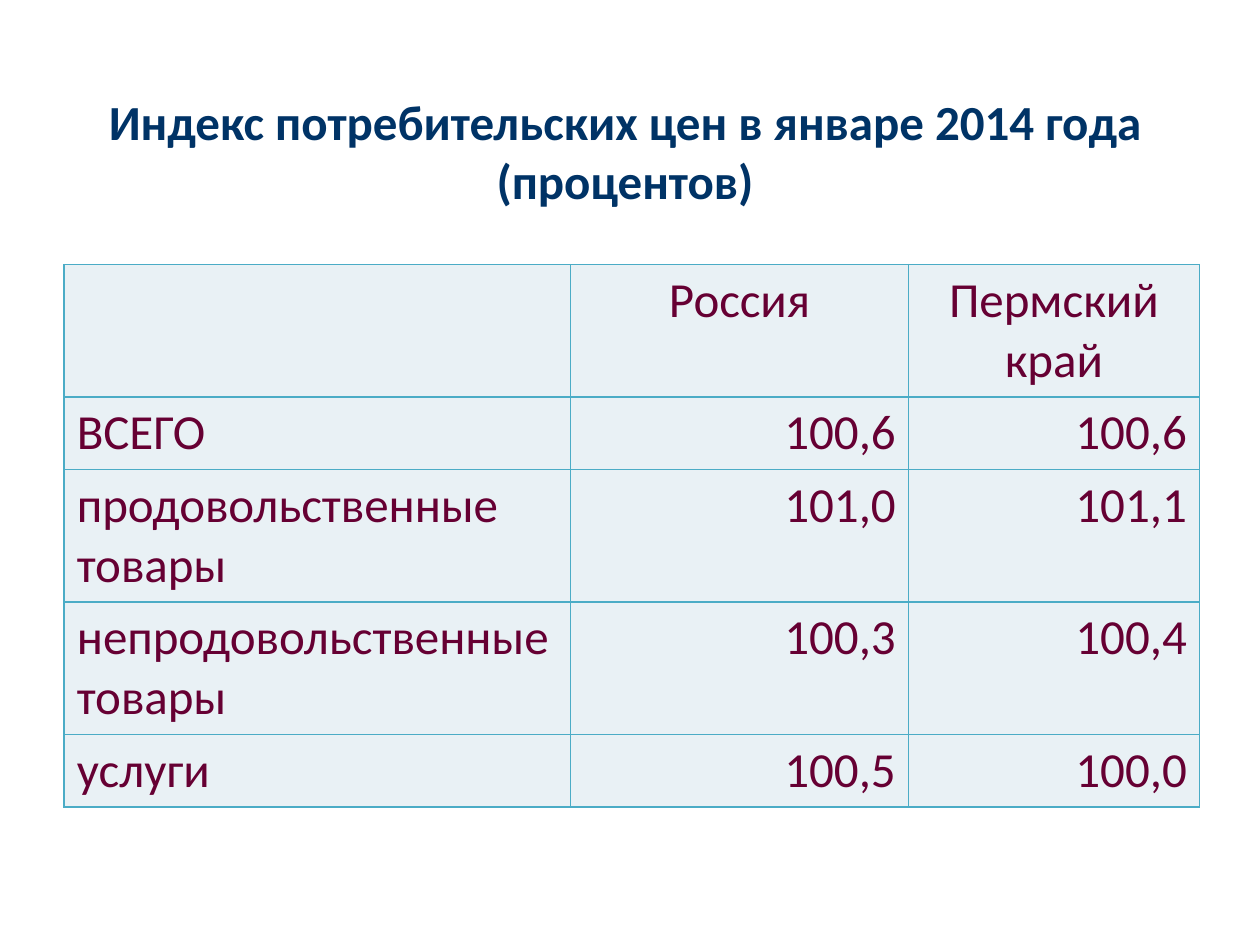
import dataclasses
import typing

import lxml.etree
import pptx
import pptx.dml.color
import pptx.enum.text
import pptx.oxml.ns
import pptx.util

Inches = pptx.util.Inches
Align = pptx.enum.text.PP_ALIGN


@dataclasses.dataclass(frozen=True)
class Theme:
    font: str = "Calibri"
    size: int = 28
    title: str = "003366"
    text: str = "660033"
    fill: str = "E9F1F5"
    border: str = "4BACC6"
    border_width: int = 1


class IndexRow(typing.NamedTuple):
    label: str
    russia: str
    region: str
    height: float


THEME = Theme()
ONE_LINE, TWO_LINES = 0.57, 1.03
TITLE_LINES = ("Индекс потребительских цен в январе 2014 года", "(процентов)")
COLUMN_WIDTHS = (4.02, 2.68, 2.31)
INDEX_ROWS = (
    IndexRow("", "Россия", "Пермский край", TWO_LINES),
    IndexRow("ВСЕГО", "100,6", "100,6", ONE_LINE),
    IndexRow("продовольственные товары", "101,0", "101,1", TWO_LINES),
    IndexRow("непродовольственные товары", "100,3", "100,4", TWO_LINES),
    IndexRow("услуги", "100,5", "100,0", ONE_LINE),
)


def style_paragraph(paragraph, color: str, alignment: Align, bold: bool) -> None:
    paragraph.alignment = alignment
    paragraph.font.name = THEME.font
    paragraph.font.size = pptx.util.Pt(THEME.size)
    paragraph.font.bold = bold
    paragraph.font.color.rgb = pptx.dml.color.RGBColor.from_string(color)


def add_borders(cell) -> None:
    properties = cell._tc.get_or_add_tcPr()
    qn = pptx.oxml.ns.qn
    for position, side in enumerate(("lnL", "lnR", "lnT", "lnB")):
        line = lxml.etree.Element(qn(f"a:{side}"), w=str(pptx.util.Pt(THEME.border_width)))
        fill = lxml.etree.SubElement(line, qn("a:solidFill"))
        lxml.etree.SubElement(fill, qn("a:srgbClr"), val=THEME.border)
        properties.insert(position, line)


def fill_cell(cell, text: str, alignment: Align) -> None:
    cell.text = text
    style_paragraph(cell.text_frame.paragraphs[0], THEME.text, alignment, False)
    cell.fill.solid()
    cell.fill.fore_color.rgb = pptx.dml.color.RGBColor.from_string(THEME.fill)
    add_borders(cell)


def add_index_table(slide) -> None:
    table = slide.shapes.add_table(
        len(INDEX_ROWS), len(COLUMN_WIDTHS),
        Inches(0.51), Inches(2.1), Inches(sum(COLUMN_WIDTHS)),
        Inches(sum(row.height for row in INDEX_ROWS)),
    ).table
    table.first_row = False
    table.horz_banding = False
    for column, width in zip(table.columns, COLUMN_WIDTHS):
        column.width = Inches(width)
    for row_number, row in enumerate(INDEX_ROWS):
        table.rows[row_number].height = Inches(row.height)
        value_alignment = Align.RIGHT if row_number else Align.CENTER
        for column_number, text in enumerate((row.label, row.russia, row.region)):
            alignment = value_alignment if column_number else Align.LEFT
            fill_cell(table.cell(row_number, column_number), text, alignment)


def add_title(slide) -> None:
    shape = slide.shapes.add_textbox(Inches(0.51), Inches(0.68), Inches(8.9), Inches(1.04))
    frame = shape.text_frame
    frame.word_wrap = True
    frame.auto_size = pptx.enum.text.MSO_AUTO_SIZE.SHAPE_TO_FIT_TEXT
    frame.text = "\n".join(TITLE_LINES)
    for paragraph in frame.paragraphs:
        style_paragraph(paragraph, THEME.title, Align.CENTER, True)


def main() -> None:
    presentation = pptx.Presentation()
    presentation.slide_width = Inches(10)
    presentation.slide_height = Inches(7.5)
    slide = presentation.slides.add_slide(presentation.slide_layouts[6])
    add_index_table(slide)
    add_title(slide)
    presentation.save("out.pptx")


if __name__ == "__main__":
    main()
